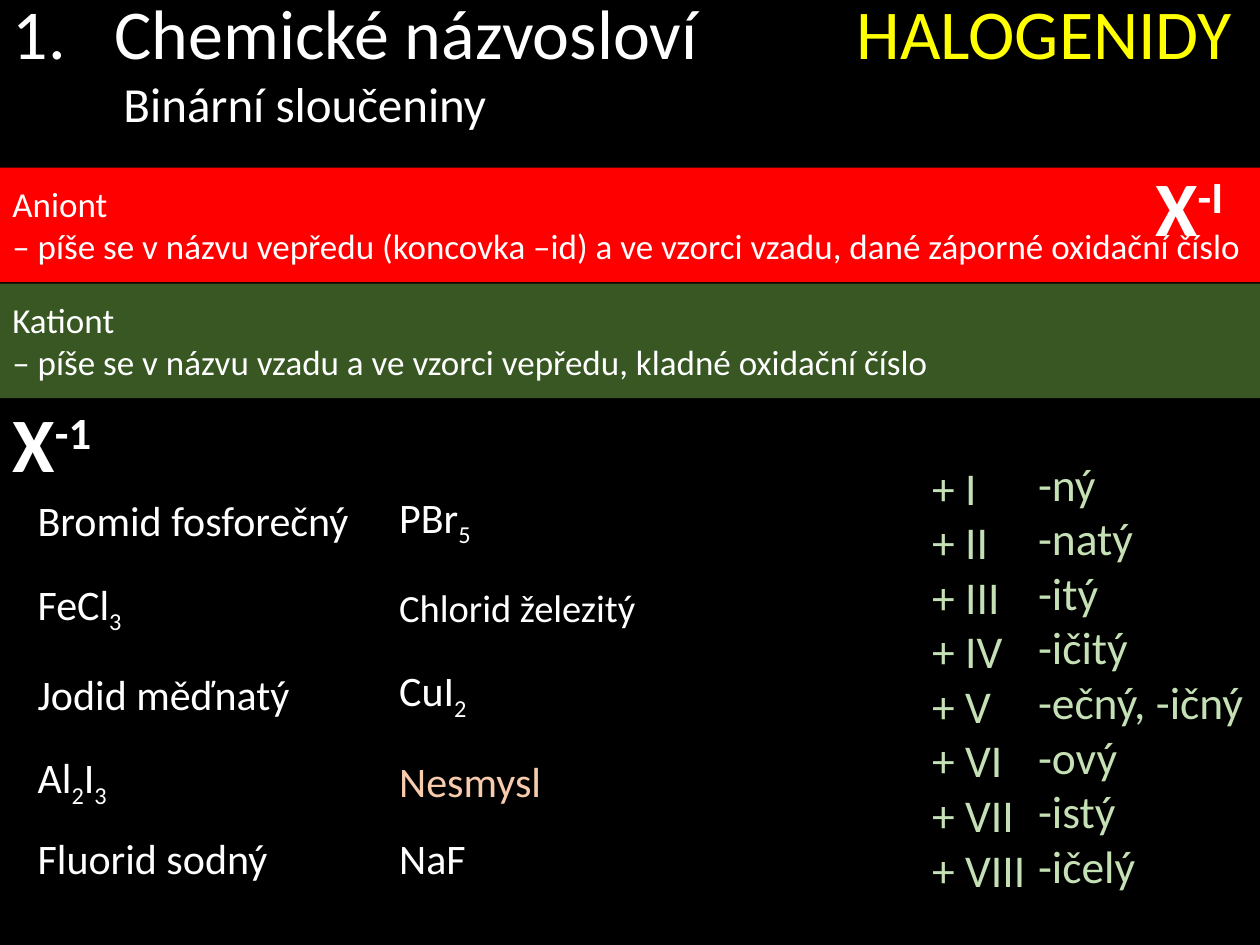
from dataclasses import dataclass

from lxml.etree import SubElement
from pptx import Presentation
from pptx.dml.color import RGBColor
from pptx.enum.shapes import MSO_SHAPE
from pptx.enum.text import MSO_ANCHOR, MSO_AUTO_SIZE, PP_ALIGN
from pptx.oxml.ns import qn
from pptx.util import Inches, Pt

COLORS = {
    "black": "000000",
    "white": "FFFFFF",
    "yellow": "FFFF00",
    "red": "FF0000",
    "green": "385723",
    "light green": "C5E0B4",
    "peach": "F8CBAD",
}
FONT = "Calibri"


@dataclass(frozen=True)
class Piece:
    text: str
    baseline: int = 0


@dataclass(frozen=True)
class Block:
    left: float
    top: float
    width: float
    height: float
    lines: tuple[tuple[Piece, ...], ...]
    size: int
    color: str = "white"
    fill: str | None = "black"
    bold: bool = False


def rgb(name: str) -> RGBColor:
    return RGBColor.from_string(COLORS[name])


def plain(*texts: str) -> tuple[tuple[Piece, ...], ...]:
    return tuple((Piece(text),) for text in texts)


def formula(*parts: str) -> tuple[tuple[Piece, ...], ...]:
    return (tuple(Piece(part, -25 if part.isdigit() else 0) for part in parts),)


def ion(charge: str) -> tuple[tuple[Piece, ...], ...]:
    return ((Piece("X"), Piece(charge, 30)),)


def add_run(paragraph, piece: Piece, size: int, color: str, bold: bool = False) -> None:
    run = paragraph.add_run()
    run.text = piece.text
    run.font.name = FONT
    run.font.size = Pt(size)
    run.font.bold = bold
    run.font.color.rgb = rgb(color)
    if piece.baseline:
        run._r.get_or_add_rPr().set("baseline", str(piece.baseline * 1000))


def draw_block(slide, block: Block) -> None:
    area = [Inches(n) for n in (block.left, block.top, block.width, block.height)]
    if block.fill:
        shape = slide.shapes.add_shape(MSO_SHAPE.RECTANGLE, *area)
        shape.shadow.inherit = False
        shape.fill.solid()
        shape.fill.fore_color.rgb = rgb(block.fill)
        shape.line.fill.background()
    else:
        shape = slide.shapes.add_textbox(*area)
    frame = shape.text_frame
    frame.word_wrap = True
    frame.vertical_anchor = MSO_ANCHOR.MIDDLE
    for index, line in enumerate(block.lines):
        paragraph = frame.add_paragraph() if index else frame.paragraphs[0]
        paragraph.alignment = PP_ALIGN.LEFT
        for piece in line:
            add_run(paragraph, piece, block.size, block.color, block.bold)


def draw_title(slide) -> None:
    title = slide.shapes.title
    title.left, title.top = Inches(0), Inches(0)
    title.width, title.height = Inches(10), Inches(1.65)
    title.fill.solid()
    title.fill.fore_color.rgb = rgb("black")
    title.line.color.rgb = rgb("black")
    title.line.width = Pt(1)
    frame = title.text_frame
    frame.auto_size = MSO_AUTO_SIZE.NONE
    frame.word_wrap = True
    frame.vertical_anchor = MSO_ANCHOR.MIDDLE
    frame.margin_top, frame.margin_bottom = Inches(0), Inches(0.68)

    heading = frame.paragraphs[0]
    heading.alignment = PP_ALIGN.LEFT
    numbering = heading._p.get_or_add_pPr()
    numbering.set("marL", str(Inches(0.81)))
    numbering.set("indent", str(Inches(-0.81)))
    SubElement(numbering, qn("a:buFont"), typeface="+mj-lt")
    SubElement(numbering, qn("a:buAutoNum"), type="arabicPeriod")
    tabs = SubElement(numbering, qn("a:tabLst"))
    SubElement(tabs, qn("a:tab"), pos=str(Inches(6.7)), algn="l")
    add_run(heading, Piece("Chemické názvosloví\t"), 40, "white")
    add_run(heading, Piece("HALOGENIDY"), 40, "yellow")

    subtitle = frame.add_paragraph()
    subtitle.alignment = PP_ALIGN.LEFT
    subtitle._p.get_or_add_pPr().set("marL", str(Inches(0.88)))
    add_run(subtitle, Piece("Binární sloučeniny"), 28, "white")


NUMERALS = ("I", "II", "III", "IV", "V", "VI", "VII", "VIII")
SUFFIXES = ("-ný", "-natý", "-itý", "-ičitý", "-ečný, -ičný", "-ový", "-istý", "-ičelý")

RULES = (
    Block(0, 1.33, 10.06, 0.91, plain(
        "Aniont",
        "– píše se v názvu vepředu (koncovka –id) a ve vzorci vzadu, dané záporné oxidační číslo",
    ), 20, fill="red"),
    Block(0, 2.25, 10.06, 0.91, plain(
        "Kationt",
        "– píše se v názvu vzadu a ve vzorci vepředu, kladné oxidační číslo",
    ), 20, fill="green"),
    Block(7.3, 3.61, 1.25, 3.54, plain(*(f"+ {n}" for n in NUMERALS)), 26, "light green"),
    Block(8.14, 3.58, 1.86, 3.54, plain(*SUFFIXES), 26, "light green"),
    Block(9.07, 1.14, 1.65, 0.98, ion("-I"), 44, fill=None, bold=True),
    Block(0, 3.05, 1.08, 0.91, ion("-1"), 44, fill=None, bold=True),
)

ROW_TOPS = (3.78, 4.47, 5.16, 5.85, 6.46)
QUESTIONS = (
    formula("Bromid fosforečný"),
    formula("FeCl", "3"),
    formula("Jodid měďnatý"),
    formula("Al", "2", "I", "3"),
    formula("Fluorid sodný"),
)
ANSWERS = (
    (formula("PBr", "5"), 24, "white"),
    (formula("Chlorid železitý"), 22, "white"),
    (formula("CuI", "2"), 24, "white"),
    (formula("Nesmysl"), 24, "peach"),
    (formula("NaF"), 24, "white"),
)


def main() -> None:
    presentation = Presentation()
    presentation.slide_width, presentation.slide_height = Inches(10), Inches(7.5)
    slide = presentation.slides.add_slide(presentation.slide_layouts[5])
    slide.background.fill.solid()
    slide.background.fill.fore_color.rgb = rgb("black")

    draw_title(slide)
    for rule in RULES:
        draw_block(slide, rule)
    for top, question in zip(ROW_TOPS, QUESTIONS):
        draw_block(slide, Block(0.2, top, 3.71, 0.69, question, 24))
    for top, (answer, size, color) in zip(ROW_TOPS, ANSWERS):
        draw_block(slide, Block(3.07, top, 2.1, 0.69, answer, size, color))
    presentation.save("out.pptx")


if __name__ == "__main__":
    main()
